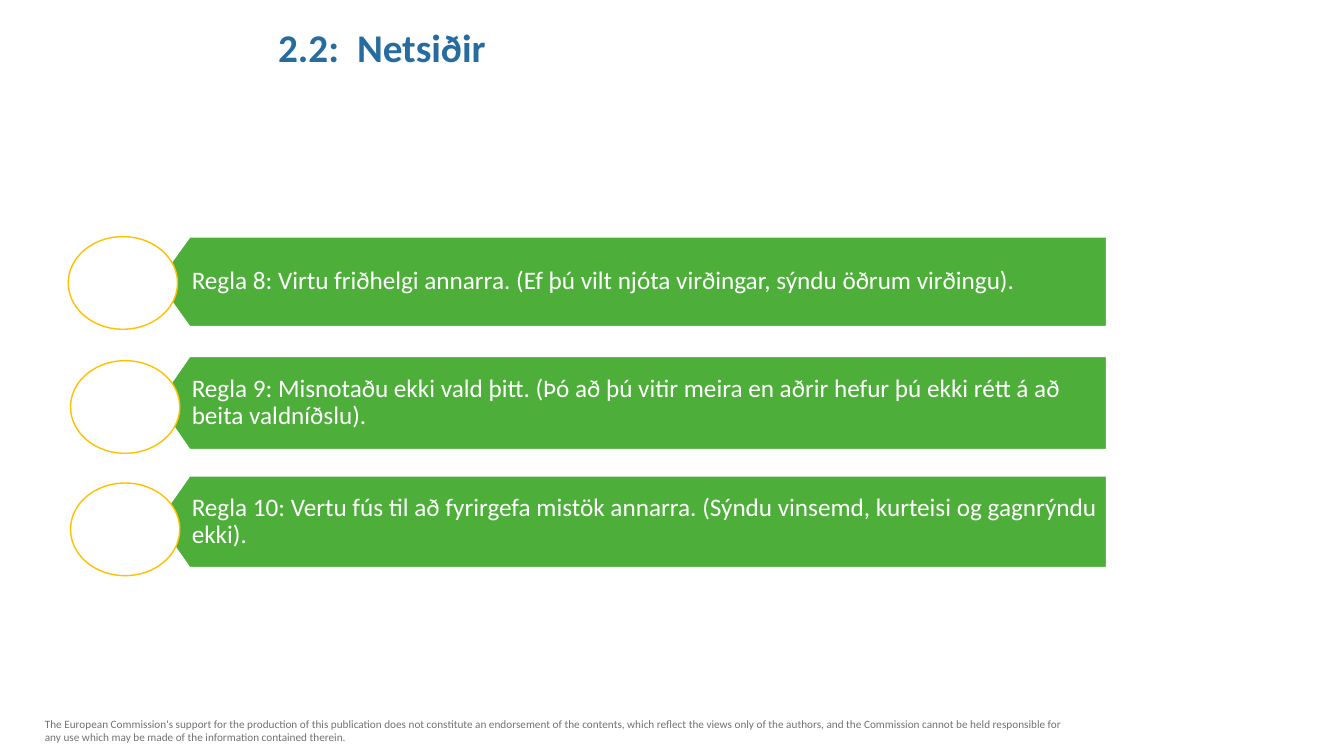
"""Builds the slide on netiquette rules 8 to 10."""
from dataclasses import dataclass

from lxml import etree
from pptx import Presentation
from pptx.dml.color import RGBColor
from pptx.enum.shapes import MSO_SHAPE
from pptx.enum.text import MSO_ANCHOR, PP_ALIGN
from pptx.oxml.ns import qn
from pptx.util import Pt

OVAL = MSO_SHAPE.OVAL
MIDDLE = MSO_ANCHOR.MIDDLE
TOP = MSO_ANCHOR.TOP
LEFT = PP_ALIGN.LEFT
TITLE_ONLY = 5


@dataclass(frozen=True)
class Theme:
    font: str = "Calibri"
    title: str = "266C9F"
    bar: str = "4EAE3A"
    ring: str = "FFC000"
    white: str = "FFFFFF"
    note: str = "767171"
    title_size: float = 28
    body_size: float = 18
    note_size: float = 8


class Deck:
    def __init__(self, prs, theme):
        self.theme = theme
        self.s = prs.slides.add_slide(prs.slide_layouts[TITLE_ONLY])

    def set_text(self, sp, text, size, color, anchor, insets, spacing=1.0, bold=False, tab=None):
        tf = sp.text_frame
        tf.word_wrap = True
        tf.vertical_anchor = anchor
        tf.margin_left, tf.margin_top, tf.margin_right, tf.margin_bottom = map(Pt, insets)
        p = tf.paragraphs[0]
        p.text = text
        p.alignment = LEFT
        p.line_spacing = spacing
        p.space_before = Pt(0)
        if tab:
            tabs = etree.SubElement(p._p.get_or_add_pPr(), qn("a:tabLst"))
            etree.SubElement(tabs, qn("a:tab"), pos=str(Pt(tab)), algn="l")
        p.font.name = self.theme.font
        p.font.size = Pt(size)
        p.font.bold = bold
        p.font.color.rgb = RGBColor.from_string(color)

    def paint(self, sp, fill, line):
        sp.shadow.inherit = False
        sp.fill.solid()
        sp.fill.fore_color.rgb = RGBColor.from_string(fill)
        sp.line.color.rgb = RGBColor.from_string(line)
        sp.line.width = Pt(1)

    def title(self, text, x, y, w, h):
        sp = self.s.shapes.title
        sp.left, sp.top, sp.width, sp.height = map(Pt, (x, y, w, h))
        self.set_text(sp, text, self.theme.title_size, self.theme.title, MIDDLE,
                      (7.2, 3.6, 7.2, 45), bold=True, tab=56.3)

    def note(self, text, x, y, w, h):
        sp = self.s.shapes.add_textbox(*map(Pt, (x, y, w, h)))
        self.set_text(sp, text, self.theme.note_size, self.theme.note, TOP,
                      (7.2, 3.6, 7.2, 3.6))

    def bar(self, text, x, y, w, h, tip=23):
        outline = [(x + tip, y + h), (x, y + h / 2), (x + tip, y), (x + w, y)]
        fb = self.s.shapes.build_freeform(Pt(x + w), Pt(y + h))
        fb.add_line_segments([(Pt(px), Pt(py)) for px, py in outline])
        sp = fb.convert_to_shape()
        self.paint(sp, self.theme.bar, self.theme.white)
        self.set_text(sp, text, self.theme.body_size, self.theme.white, MIDDLE,
                      (24.5, 3.6, 6.5, 3.6), spacing=0.9)

    def ring(self, x, y, w=78, h=66.2):
        sp = self.s.shapes.add_shape(OVAL, *map(Pt, (x, y, w, h)))
        self.paint(sp, self.theme.white, self.theme.ring)


RULES = [
    ("Regla 8: Virtu friðhelgi annarra. (Ef þú vilt njóta virðingar, sýndu öðrum virðingu).",
     64, 48.8, 169),
    ("Regla 9: Misnotaðu ekki vald þitt. (Þó að þú vitir meira en aðrir hefur þú ekki rétt á að "
     "beita valdníðslu).",
     66.5, 50.4, 257.6),
    ("Regla 10: Vertu fús til að fyrirgefa mistök annarra. (Sýndu vinsemd, kurteisi og gagnrýndu "
     "ekki).",
     65.5, 50.4, 345),
]
BAR_TOP, BAR_PITCH = 169.3, 85.3


def main():
    prs = Presentation()
    prs.slide_width, prs.slide_height = Pt(960), Pt(540)
    deck = Deck(prs, Theme())
    deck.note("The European Commission's support for the production of this publication does not "
              "constitute an endorsement of the contents, which reflect the views only of the "
              "authors, and the Commission cannot be held responsible for any use which may be "
              "made of the information contained therein.", 25, 508.5, 753, 27)
    deck.title("2.2:\tNetsiðir", 191.5, 26, 288.7, 57)
    for i, (text, height, ring_x, ring_y) in enumerate(RULES):
        deck.bar(text, 112.5, BAR_TOP + i * BAR_PITCH, 678, height)
        deck.ring(ring_x, ring_y)
    prs.save("out.pptx")


if __name__ == "__main__":
    main()
